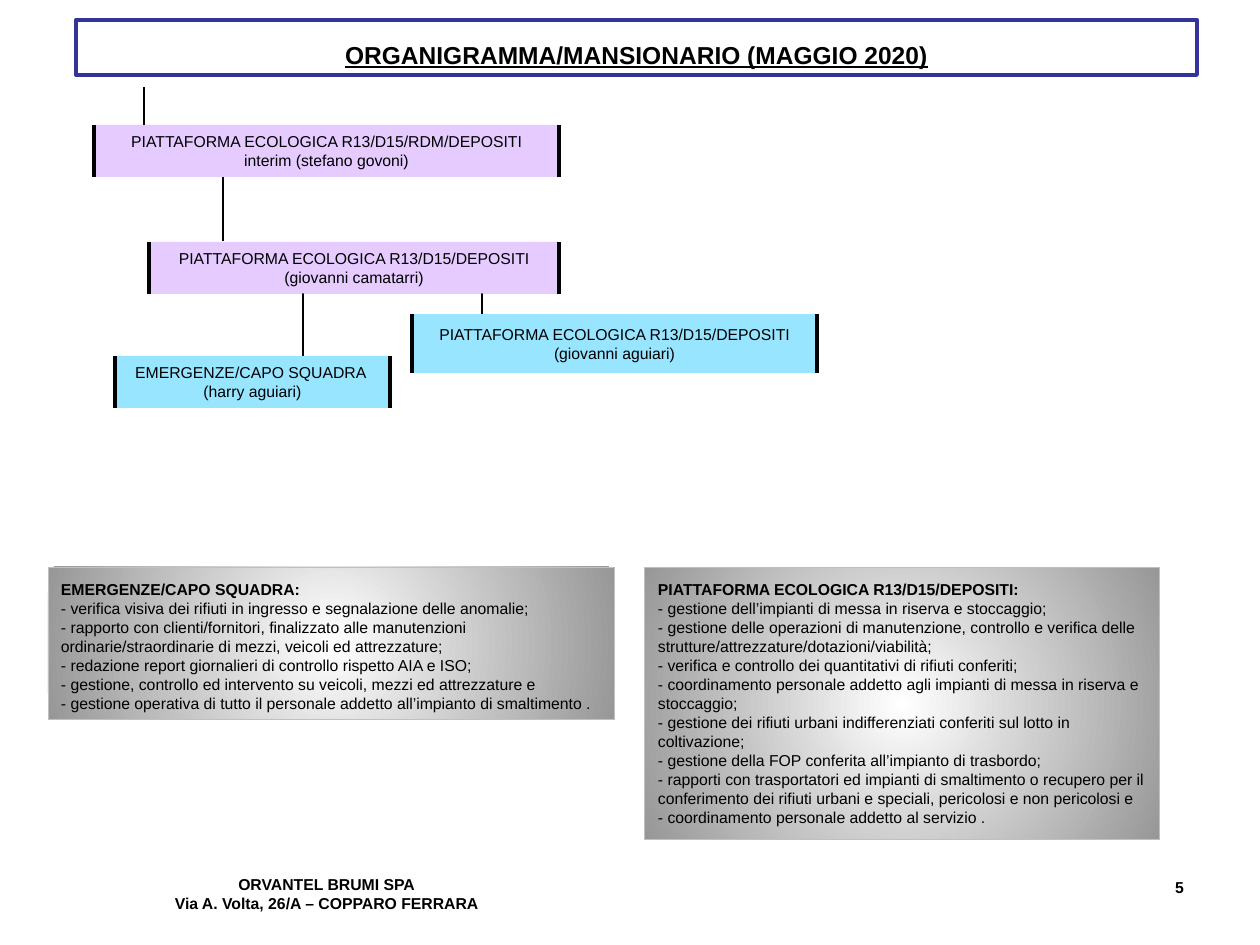
from lxml import etree
from pptx import Presentation
from pptx import util as u
from pptx.dml.color import RGBColor
from pptx.enum import shapes, text
from pptx.oxml import parse_xml
from pptx.oxml.ns import nsdecls, qn

PX = 914400 / 126
BLACK = RGBColor(0x00, 0x00, 0x00)
NAVY = RGBColor(0x33, 0x33, 0x99)
SILVER = RGBColor(0xC0, 0xC0, 0xC0)
VIOLET = RGBColor(0xCC, 0x99, 0xFF)
SKY = RGBColor(0x33, 0xCC, 0xFF)
CENTER, LEFT, RIGHT = text.PP_ALIGN.CENTER, text.PP_ALIGN.LEFT, text.PP_ALIGN.RIGHT

RADIAL_FILL = f"""<a:gradFill {nsdecls('a')} rotWithShape="1"><a:gsLst>
<a:gs pos="0"><a:srgbClr val="FFFFFF"/></a:gs>
<a:gs pos="100000"><a:srgbClr val="979797"/></a:gs></a:gsLst>
<a:path path="circle"><a:fillToRect l="50000" t="50000" r="50000" b="50000"/></a:path>
</a:gradFill>"""


def px(*lengths):
    """Turn whole pixels into EMU."""
    return [u.Emu(round(length * PX)) for length in lengths]


def write(box, lines, size=9, align=CENTER, bold_lines=0, underline=None,
          anchor=text.MSO_ANCHOR.TOP, wrap=True, insets=(13, 6)):
    """Fill a shape with one paragraph per line; the first bold_lines are bold."""
    frame = box.text_frame
    frame.word_wrap = wrap
    frame.auto_size = text.MSO_AUTO_SIZE.NONE
    frame.vertical_anchor = anchor
    frame.margin_left = frame.margin_right = px(insets[0])[0]
    frame.margin_top = frame.margin_bottom = px(insets[1])[0]
    for number, line in enumerate(lines):
        para = frame.add_paragraph() if number else frame.paragraphs[0]
        para.alignment = align
        span = para.add_run()
        span.text = line
        span.font.name = "Arial"
        span.font.size = u.Pt(size)
        span.font.bold = number < bold_lines
        span.font.underline = underline
        span.font.color.rgb = BLACK


deck = Presentation()
deck.slide_width, deck.slide_height = px(1260, 945)
page = deck.slides.add_slide(deck.slide_layouts[5])

# Title
title = page.shapes.title
title.left, title.top, title.width, title.height = px(76, 20, 1121, 55)
title.line.color.rgb = NAVY
title.line.width = u.Pt(2.25)
write(title, ["ORGANIGRAMMA/MANSIONARIO (MAGGIO 2020)"], size=14, bold_lines=1,
      underline=True, anchor=text.MSO_ANCHOR.BOTTOM)

# Footer
footers = [
    ((127, 869, 399, 54), CENTER,
     ["ORVANTEL BRUMI SPA", "Via A. Volta, 26/A – COPPARO FERRARA"]),
    ((903, 872, 294, 54), RIGHT, ["5"]),
]
for place, align, lines in footers:
    footer = page.shapes.add_textbox(*px(*place))
    write(footer, lines, align=align, bold_lines=len(lines))

# Organisation chart: vertical links (x, top, bottom), then the roles
for x, top, bottom in [(144, 87, 125), (223, 177, 241), (303, 293, 356), (482, 293, 314)]:
    link = page.shapes.add_connector(shapes.MSO_CONNECTOR.STRAIGHT, *px(x, top, x, bottom))
    link.line.color.rgb = BLACK
    link.line.width = u.Pt(0.75)
    etree.SubElement(link._element.spPr, qn("a:effectLst"))

roles = [
    ((94, 125, 465, 52), VIOLET,
     ["PIATTAFORMA ECOLOGICA R13/D15/RDM/DEPOSITI", "interim (stefano govoni)"]),
    ((149, 242, 410, 52), VIOLET,
     ["PIATTAFORMA ECOLOGICA R13/D15/DEPOSITI", "(giovanni camatarri)"]),
    ((412, 314, 405, 59), SKY,
     ["PIATTAFORMA ECOLOGICA R13/D15/DEPOSITI", "(giovanni aguiari)"]),
    ((115, 356, 275, 52), SKY,
     ["EMERGENZE/CAPO SQUADRA ", "(harry aguiari)"]),
]
for place, color, lines in roles:
    role = page.shapes.add_shape(shapes.MSO_SHAPE.DOUBLE_BRACKET, *px(*place))
    role.adjustments[0] = 0
    role.shadow.inherit = False
    role.fill.solid()
    role.fill.fore_color.rgb = color
    color_node = role._element.spPr.find(qn("a:solidFill"))[0]
    etree.SubElement(color_node, qn("a:alpha"), val="50000")
    role.line.color.rgb = BLACK
    role.line.width = u.Pt(2.25)
    write(role, lines, anchor=text.MSO_ANCHOR.MIDDLE, wrap=False, insets=(5, 3))

# Job descriptions
duties = [
    ((48, 567, 567, 153), [
        "EMERGENZE/CAPO SQUADRA:",
        "- verifica visiva dei rifiuti in ingresso e segnalazione delle anomalie;",
        "- rapporto con clienti/fornitori, finalizzato alle manutenzioni "
        "ordinarie/straordinarie di mezzi, veicoli ed attrezzature;",
        "- redazione report giornalieri di controllo rispetto AIA e ISO;",
        "- gestione, controllo ed intervento su veicoli, mezzi ed attrezzature e",
        "- gestione operativa di tutto il personale addetto all’impianto di smaltimento .",
    ]),
    ((645, 567, 515, 273), [
        "PIATTAFORMA ECOLOGICA R13/D15/DEPOSITI:",
        "- gestione dell’impianti di messa in riserva e stoccaggio;",
        "- gestione delle operazioni di manutenzione, controllo e verifica delle "
        "strutture/attrezzature/dotazioni/viabilità;",
        "- verifica e controllo dei quantitativi di rifiuti conferiti;",
        "- coordinamento personale addetto agli impianti di messa in riserva e stoccaggio;",
        "- gestione dei rifiuti urbani indifferenziati conferiti sul lotto in coltivazione;",
        "- gestione della FOP conferita all’impianto di trasbordo;",
        "- rapporti con trasportatori ed impianti di smaltimento o recupero per il "
        "conferimento dei rifiuti urbani e speciali, pericolosi e non pericolosi e",
        "- coordinamento personale addetto al servizio .",
    ]),
]
for place, lines in duties:
    panel = page.shapes.add_shape(shapes.MSO_SHAPE.RECTANGLE, *px(*place))
    panel.shadow.inherit = False
    panel.line.color.rgb = SILVER
    panel.line.width = u.Pt(0.5)
    panel._element.spPr.find(qn("a:prstGeom")).addnext(parse_xml(RADIAL_FILL))
    write(panel, lines, align=LEFT, bold_lines=1, insets=(13, 13))

deck.save("out.pptx")
